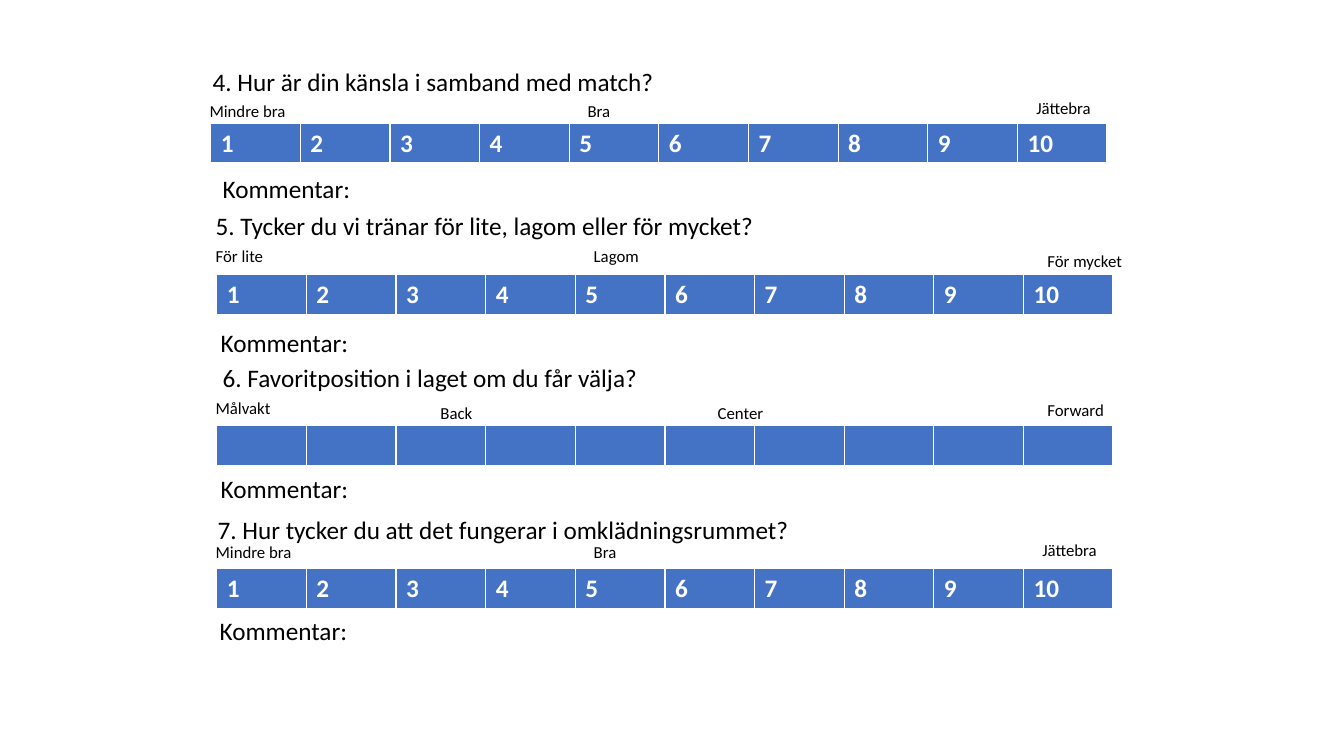
from dataclasses import dataclass

from lxml import etree
from pptx import Presentation
from pptx.dml.color import RGBColor
from pptx.enum.text import MSO_ANCHOR, MSO_AUTO_SIZE
from pptx.oxml.ns import qn
from pptx.util import Inches, Pt

TOP = MSO_ANCHOR.TOP
GROW = MSO_AUTO_SIZE.SHAPE_TO_FIT_TEXT


@dataclass(frozen=True)
class Theme:
    font: str = "Calibri"
    ink: str = "000000"
    white: str = "FFFFFF"
    blue: str = "4472C4"
    large: int = 18
    small: int = 12


THEME = Theme()
STEPS = 10
BAR_W, BAR_H = 8.89, 0.41
EDGES = {"lnL": 1, "lnR": 1, "lnT": 1, "lnB": 3}

# Each part is (text, x, y, width), measured from the corner of its scale.
SECTIONS = [
    dict(
        box=(2.09, 1.22),
        title=("4. Hur är din känsla i samband med match?", -0.08, -0.61, 4.62),
        labels=[
            ("Mindre bra", -0.11, -0.27, 0.96),
            ("Bra", 3.64, -0.27, 0.43),
            ("Jättebra", 8.09, -0.30, 0.75),
        ],
        note=(0.02, 0.45),
    ),
    dict(
        box=(2.15, 2.72),
        title=("5. Tycker du vi tränar för lite, lagom eller för mycket?",
               -0.11, -0.68, 5.59),
        labels=[
            ("För lite", -0.11, -0.33, 0.68),
            ("Lagom", 3.64, -0.33, 0.65),
            ("För mycket", 8.14, -0.28, 0.95),
        ],
        note=(-0.06, 0.48),
    ),
    dict(
        box=(2.15, 4.22),
        title=("6. Favoritposition i laget om du får välja?", -0.04, -0.67, 4.36),
        labels=[
            ("Målvakt", -0.11, -0.32, 0.75),
            ("Back", 2.12, -0.27, 0.52),
            ("Center", 4.87, -0.27, 0.66),
            ("Forward", 8.14, -0.30, 0.77),
        ],
        note=(-0.06, 0.43),
        numbered=False,
    ),
    dict(
        box=(2.15, 5.64),
        title=("7. Hur tycker du att det fungerar i omklädningsrummet?",
               -0.09, -0.59, 5.94),
        labels=[
            ("Mindre bra", -0.11, -0.31, 0.96),
            ("Bra", 3.64, -0.31, 0.43),
            ("Jättebra", 8.09, -0.33, 0.75),
        ],
        note=(-0.07, 0.42),
    ),
]


def write(frame, text, size=THEME.large, color=THEME.ink, bold=False):
    run = frame.paragraphs[0].add_run()
    run.text = text
    font = run.font
    font.name, font.size, font.bold = THEME.font, Pt(size), bold
    font.color.rgb = RGBColor.from_string(color)


def add_text(slide, text, x, y, width, size=THEME.large):
    height = 0.4 if size == THEME.large else 0.3
    box = slide.shapes.add_textbox(
        Inches(x), Inches(y), Inches(width), Inches(height))
    frame = box.text_frame
    frame.word_wrap = False
    frame.auto_size = GROW
    frame.vertical_anchor = TOP
    write(frame, text, size=size)


def add_edges(cell):
    props = cell._tc.get_or_add_tcPr()
    for name, width in EDGES.items():
        line = etree.SubElement(props, qn(f"a:{name}"), w=str(Pt(width)))
        fill = etree.SubElement(line, qn("a:solidFill"))
        etree.SubElement(fill, qn("a:srgbClr"), val=THEME.white)


def add_scale(slide, x, y, numbered):
    table = slide.shapes.add_table(
        1, STEPS, Inches(x), Inches(y), Inches(BAR_W), Inches(BAR_H)).table
    for step in range(STEPS):
        table.columns[step].width = Inches(BAR_W / STEPS)
        cell = table.cell(0, step)
        add_edges(cell)
        cell.fill.solid()
        cell.fill.fore_color.rgb = RGBColor.from_string(THEME.blue)
        if numbered:
            write(cell.text_frame, str(step + 1), color=THEME.white, bold=True)


def add_section(slide, box, title, labels, note, numbered=True):
    """Place a question, its scale with labels, and the comment line."""
    left, top = box
    add_scale(slide, left, top, numbered)
    for text, x, y, width in labels:
        add_text(slide, text, left + x, top + y, width, size=THEME.small)
    text, x, y, width = title
    add_text(slide, text, left + x, top + y, width)
    x, y = note
    add_text(slide, "Kommentar:", left + x, top + y, 1.48)


def main():
    deck = Presentation()
    deck.slide_width, deck.slide_height = Inches(13.33), Inches(7.5)
    slide = deck.slides.add_slide(deck.slide_layouts[6])
    for section in SECTIONS:
        add_section(slide, **section)
    deck.save("out.pptx")


if __name__ == "__main__":
    main()
